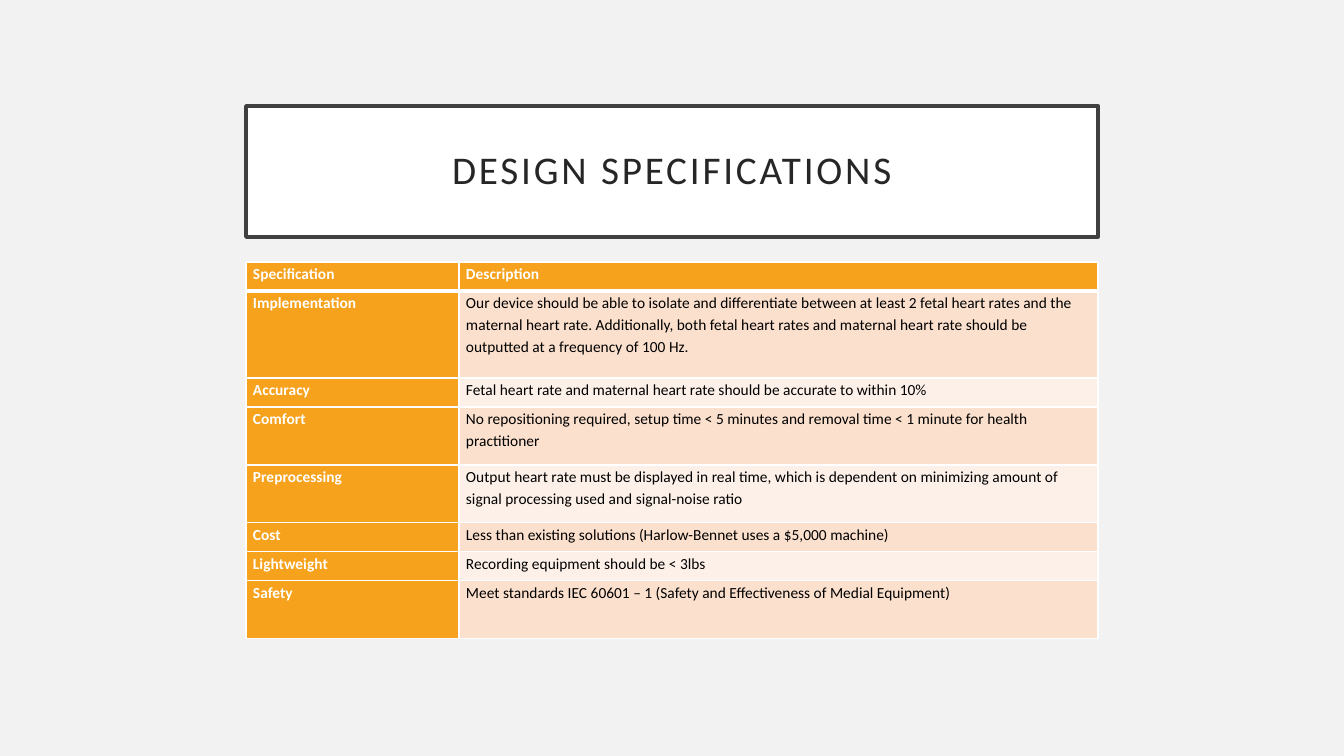
from lxml import etree
from pptx import Presentation
from pptx.dml.color import RGBColor
from pptx.enum.text import MSO_ANCHOR, MSO_AUTO_SIZE, PP_ALIGN
from pptx.oxml.ns import qn
from pptx.util import Emu, Pt

MIDDLE = MSO_ANCHOR.MIDDLE
CENTER = PP_ALIGN.CENTER
NO_FIT = MSO_AUTO_SIZE.NONE

WHITE = RGBColor(0xFF, 0xFF, 0xFF)
BLACK = RGBColor(0x00, 0x00, 0x00)
GRAY = RGBColor(0xF2, 0xF2, 0xF2)
DARK = RGBColor(0x40, 0x40, 0x40)
INK = RGBColor(0x26, 0x26, 0x26)
ORANGE = RGBColor(0xF6, 0xA2, 0x1D)
PEACH = RGBColor(0xFB, 0xE0, 0xCD)
CREAM = RGBColor(0xFD, 0xF0, 0xE8)
FONT = "Calibri"
LEFT, WIDTH = 246, 852
LINE = 29

# Each row: name, description, height in text lines
SPECS = [
    ("Specification", "Description", 1),
    ("Implementation", "Our device should be able to isolate and differentiate "
     "between at least 2 fetal heart rates and the maternal heart rate. "
     "Additionally, both fetal heart rates and maternal heart rate should be "
     "outputted at a frequency of 100 Hz.", 3),
    ("Accuracy", "Fetal heart rate and maternal heart rate should be accurate "
     "to within 10%", 1),
    ("Comfort", "No repositioning required, setup time < 5 minutes and removal "
     "time < 1 minute for health practitioner", 2),
    ("Preprocessing", "Output heart rate must be displayed in real time, which "
     "is dependent on minimizing amount of signal processing used and "
     "signal-noise ratio", 2),
    ("Cost", "Less than existing solutions (Harlow-Bennet uses a $5,000 machine)", 1),
    ("Lightweight", "Recording equipment should be < 3lbs", 1),
    ("Safety", "Meet standards IEC 60601 – 1 (Safety and Effectiveness of "
     "Medial Equipment)", 2),
]


def px(n):
    return Emu(round(n * 914400 / 100.8))


def edge(cell, side, points):
    """Draw a white border on one side: L, R, T or B."""
    tag = cell._tc.get_or_add_tcPr()
    line = etree.SubElement(tag, qn(f"a:ln{side}"), w=str(Pt(points)))
    fill = etree.SubElement(line, qn("a:solidFill"))
    etree.SubElement(fill, qn("a:srgbClr"), val=str(WHITE))


deck = Presentation()
deck.slide_width, deck.slide_height = px(1344), px(756)
slide = deck.slides.add_slide(deck.slide_layouts[5])
slide.background.fill.solid()
slide.background.fill.fore_color.rgb = GRAY

# Title
title = slide.shapes.title
title.left, title.top = px(LEFT), px(106)
title.width, title.height = px(WIDTH), px(131)
title.fill.solid()
title.fill.fore_color.rgb = WHITE
title.line.color.rgb = DARK
title.line.width = Pt(2.5)
frame = title.text_frame
frame.word_wrap = True
frame.auto_size = NO_FIT
frame.vertical_anchor = MIDDLE
frame.margin_left = frame.margin_right = px(20)
frame.margin_top = frame.margin_bottom = px(20)
para = frame.paragraphs[0]
para.alignment = CENTER
para.line_spacing = 0.9
run = para.add_run()
run.text = "DESIGN SPECIFICATIONS"
run.font.name = FONT
run.font.size = Pt(28)
run.font.color.rgb = INK
run._r.get_or_add_rPr().set("spc", "200")

# Table
total = LINE * sum(spec[2] for spec in SPECS)
table = slide.shapes.add_table(
    len(SPECS), 2, px(LEFT), px(262), px(WIDTH), px(total)).table
for col, width in zip(table.columns, (213, 639)):
    col.width = px(width)

for r, (name, about, lines) in enumerate(SPECS):
    table.rows[r].height = px(LINE * lines)
    for c, text in enumerate((name, about)):
        cell = table.cell(r, c)
        head = r == 0 or c == 0
        for side in "LRTB":
            edge(cell, side, 3 if (r, side) in ((0, "B"), (1, "T")) else 1)
        cell.fill.solid()
        cell.fill.fore_color.rgb = ORANGE if head else PEACH if r % 2 else CREAM
        cell.margin_left = cell.margin_right = px(7)
        cell.margin_top = cell.margin_bottom = 0
        para = cell.text_frame.paragraphs[0]
        para.line_spacing = 1.15
        run = para.add_run()
        run.text = text
        run.font.name = FONT
        run.font.size = Pt(11)
        run.font.bold = head
        run.font.color.rgb = WHITE if head else BLACK

deck.save("out.pptx")
